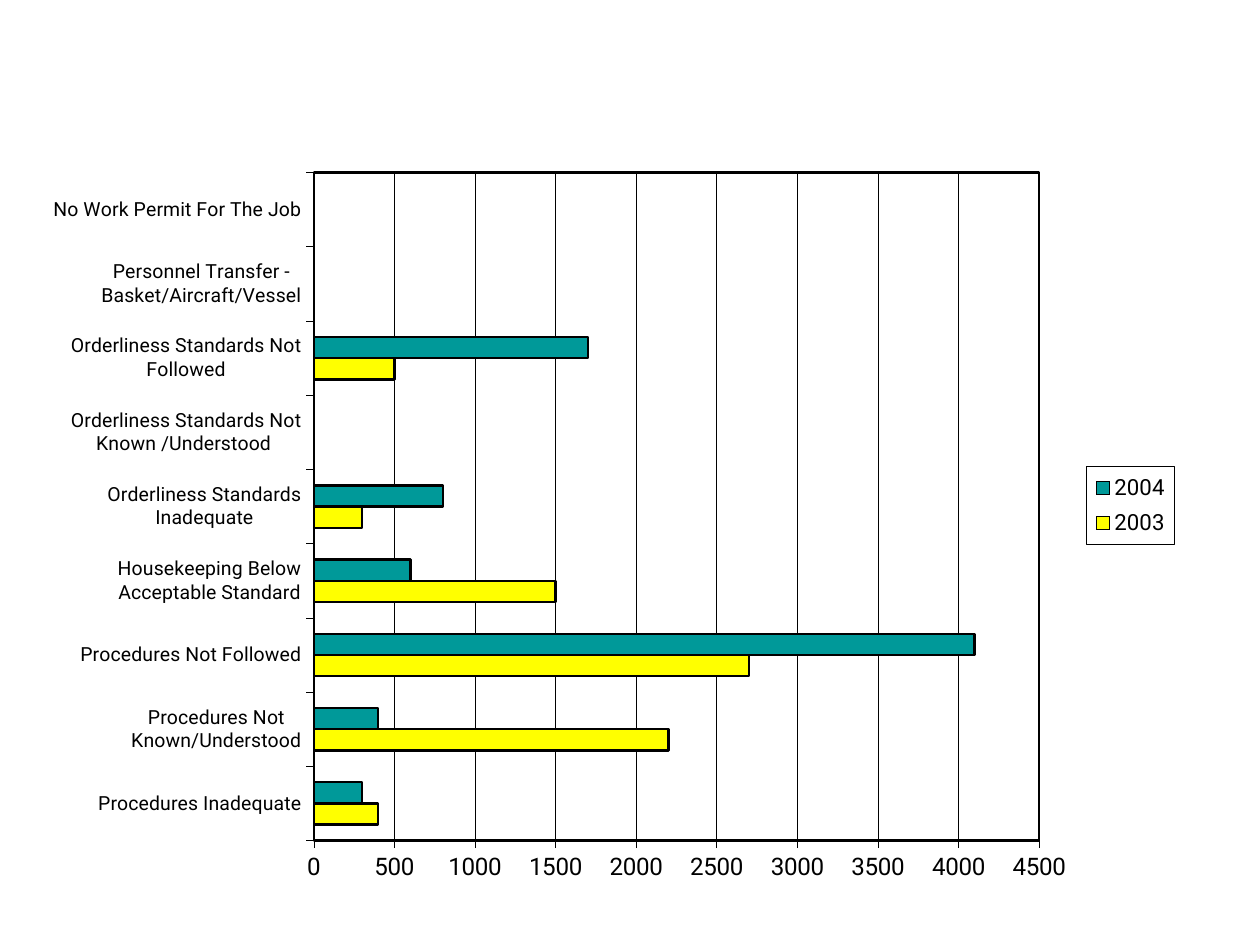
"""Build a slide comparing safety findings by cause for 2003 and 2004."""
import dataclasses
import typing

import lxml.etree
import pptx
import pptx.chart.data
import pptx.dml.color
import pptx.enum.chart
import pptx.oxml.ns
import pptx.util

COLORS = {"ink": "000000", "paper": "FFFFFF", "yellow": "FFFF00", "teal": "009999"}
FONT = "Roboto"
qn = pptx.oxml.ns.qn


@dataclasses.dataclass(frozen=True)
class Year:
    """Findings of one year, in the order of CAUSES."""
    name: str
    counts: tuple[int, ...]
    color: str


@dataclasses.dataclass(frozen=True)
class Frame:
    """A position inside the chart as fractions of its size."""
    x: float
    y: float
    w: float
    h: float


CAUSES = (
    "Procedures Inadequate",
    "Procedures Not Known/Understood",
    "Procedures Not Followed",
    "Housekeeping Below Acceptable Standard",
    "Orderliness Standards Inadequate",
    "Orderliness Standards Not Known /Understood ",
    "Orderliness Standards Not Followed",
    "Personnel Transfer - Basket/Aircraft/Vessel",
    "No Work Permit For The Job",
)
YEARS = (
    Year("2003", (400, 2200, 2700, 1500, 300, 0, 500, 0, 0), "yellow"),
    Year("2004", (300, 400, 4100, 600, 800, 0, 1700, 0, 0), "teal"),
)


def rgb(color: str) -> pptx.dml.color.RGBColor:
    """Look up a palette colour."""
    return pptx.dml.color.RGBColor.from_string(COLORS[color])


def format_text(text: typing.Any, *, size: float, color: str = "ink", bold: bool = False) -> None:
    """Set the font of a chart part that holds text."""
    text.font.name = FONT
    text.font.size = pptx.util.Pt(size)
    text.font.bold = bold
    text.font.color.rgb = rgb(color)


def format_line(line: typing.Any, width: float) -> None:
    """Give a line the ink colour and a width in points."""
    line.color.rgb = rgb("ink")
    line.width = pptx.util.Pt(width)


def format_axis(axis: typing.Any, size: float) -> None:
    """Style an axis with outside ticks and a hairline."""
    axis.major_tick_mark = pptx.enum.chart.XL_TICK_MARK.OUTSIDE
    axis.minor_tick_mark = pptx.enum.chart.XL_TICK_MARK.NONE
    format_line(axis.format.line, 0.35)
    format_text(axis.tick_labels, size=size)


def make_layout(frame: Frame, inner: bool = False) -> typing.Any:
    """Make a manual layout element."""
    layout = lxml.etree.Element(qn("c:layout"))
    manual = lxml.etree.SubElement(layout, qn("c:manualLayout"))
    settings = {"layoutTarget": "inner"} if inner else {}
    settings |= {"xMode": "edge", "yMode": "edge"}
    settings |= {key: str(value) for key, value in dataclasses.asdict(frame).items()}
    for tag, value in settings.items():
        lxml.etree.SubElement(manual, qn(f"c:{tag}")).set("val", value)
    return layout


def make_border(width: float) -> typing.Any:
    """Make shape properties with a paper fill and an ink outline."""
    properties = lxml.etree.Element(qn("c:spPr"))
    fill = lxml.etree.SubElement(properties, qn("a:solidFill"))
    lxml.etree.SubElement(fill, qn("a:srgbClr")).set("val", COLORS["paper"])
    outline = lxml.etree.SubElement(properties, qn("a:ln"))
    outline.set("w", str(int(pptx.util.Pt(width))))
    ink = lxml.etree.SubElement(outline, qn("a:solidFill"))
    lxml.etree.SubElement(ink, qn("a:srgbClr")).set("val", COLORS["ink"])
    return properties


def style_plot(chart: typing.Any) -> None:
    """Place the plot area and colour its bars."""
    plot = chart.plots[0]
    plot.gap_width = 150
    plot.overlap = 0
    plot.vary_by_categories = False
    for year, series in zip(YEARS, plot.series):
        series.invert_if_negative = False
        series.format.fill.solid()
        series.format.fill.fore_color.rgb = rgb(year.color)
        format_line(series.format.line, 1.38)
    area = chart._chartSpace.find(f".//{qn('c:plotArea')}")
    for layout in area.findall(qn("c:layout")):
        area.remove(layout)
    area.insert(0, make_layout(Frame(0.244, 0.026, 0.632, 0.878), inner=True))
    area.append(make_border(1.38))


def style_legend(chart: typing.Any) -> None:
    """Place the boxed legend at the right."""
    chart.has_legend = True
    legend = chart.legend
    legend.position = pptx.enum.chart.XL_LEGEND_POSITION.RIGHT
    legend.include_in_layout = False
    format_text(legend, size=12.7)
    element = legend._element
    for layout in element.findall(qn("c:layout")):
        element.remove(layout)
    overlay = element.find(qn("c:overlay"))
    overlay.addprevious(make_layout(Frame(0.917, 0.412, 0.077, 0.103)))
    overlay.addnext(make_border(0.35))


def add_findings(slide: typing.Any) -> None:
    """Add the bar chart of findings."""
    findings = pptx.chart.data.CategoryChartData(number_format="General")
    findings.categories = CAUSES
    for year in YEARS:
        findings.add_series(year.name, year.counts)
    place = [pptx.util.Cm(length) for length in (0.68, 3.08, 23.14, 15.34)]
    kind = pptx.enum.chart.XL_CHART_TYPE.BAR_CLUSTERED
    chart = slide.shapes.add_chart(kind, *place, findings).chart
    chart.has_title = False
    format_text(chart, size=24.9, bold=True)
    format_axis(chart.category_axis, 11.1)
    counts = chart.value_axis
    format_axis(counts, 13.8)
    counts.minimum_scale, counts.maximum_scale, counts.major_unit = 0, 4500, 500
    counts.has_major_gridlines = True
    format_line(counts.major_gridlines.format.line, 0.35)
    style_plot(chart)
    style_legend(chart)


def main() -> None:
    """Build and save the slide."""
    deck = pptx.Presentation()
    deck.slide_width = pptx.util.Cm(25.4)
    deck.slide_height = pptx.util.Cm(19.05)
    add_findings(deck.slides.add_slide(deck.slide_layouts[6]))
    deck.save("out.pptx")


if __name__ == "__main__":
    main()
